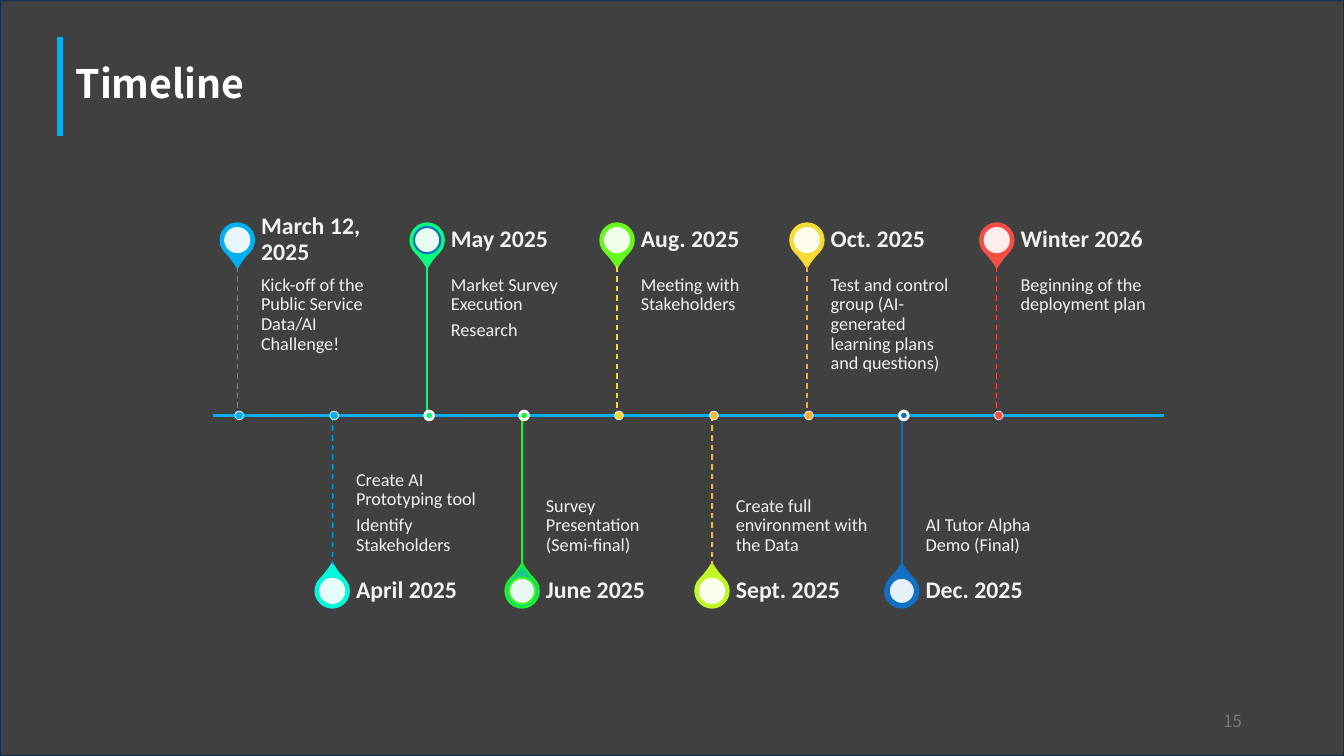
from dataclasses import dataclass
from typing import Optional

from lxml.etree import SubElement
from pptx import Presentation
from pptx.dml.color import RGBColor
from pptx.enum.dml import MSO_LINE
from pptx.enum.shapes import MSO_CONNECTOR, MSO_SHAPE
from pptx.enum.text import MSO_ANCHOR, MSO_AUTO_SIZE, PP_ALIGN
from pptx.oxml.ns import qn
from pptx.util import Cm, Pt

WHITE = RGBColor(0xFF, 0xFF, 0xFF)
CHARCOAL = RGBColor(0x40, 0x40, 0x40)
NAVY = RGBColor(0x07, 0x31, 0x56)
PALE = RGBColor(0xF2, 0xF2, 0xF2)
GREY = RGBColor(0x79, 0x79, 0x79)
SKY = RGBColor(0x02, 0xB0, 0xF1)
AQUA = RGBColor(0x03, 0xF8, 0xD9)
MINT = RGBColor(0x0A, 0xFA, 0x7B)
TEAL = RGBColor(0x1D, 0xC6, 0x95)
GREEN = RGBColor(0x14, 0xF9, 0x24)
BRIGHT_GREEN = RGBColor(0x3D, 0xF9, 0x1A)
GRASS = RGBColor(0x67, 0xF8, 0x1E)
LIME = RGBColor(0xC1, 0xF7, 0x28)
YELLOW = RGBColor(0xF6, 0xDB, 0x32)
AMBER = RGBColor(0xF6, 0xBC, 0x36)
ORANGE = RGBColor(0xF6, 0xA9, 0x38)
BLUE = RGBColor(0x11, 0x70, 0xC4)
RED = RGBColor(0xF5, 0x4F, 0x45)

HEADING_FONT = "Noto Sans CJK SC"
BODY_FONT = "Calibri"

# All lengths below are centimetres.
SLIDE_WIDTH, SLIDE_HEIGHT = 33.87, 19.05
AXIS_Y, AXIS_LEFT, AXIS_RIGHT = 10.47, 5.36, 29.34
FIRST_STEM_X, LAST_STEM_X = 5.98, 25.12
STEM_LENGTH = 3.76
PIN_OFFSET = 0.66
PIN_SIZE, HOLE_SIZE, DOT_SIZE = 0.84, 0.66, 0.22
DOT_SHIFT = 0.05
TEXT_SHIFT, TEXT_WIDTH, DATE_HEIGHT = 0.6, 3.61, 1.32


@dataclass
class Milestone:
    """A dated stop; one with a ring gets a solid stem and a heavy dot."""
    date: str
    notes: list[str]
    pin: RGBColor
    stem: RGBColor
    pin_line: Optional[RGBColor] = None
    ring: Optional[RGBColor] = None


MILESTONES = [
    Milestone("March 12, 2025", ["Kick-off of the Public Service Data/AI Challenge!"], SKY, SKY),
    Milestone("April 2025", ["Create AI Prototyping tool", "Identify Stakeholders"], AQUA, SKY),
    Milestone("May 2025", ["Market Survey Execution", "Research"], MINT, MINT, ring=BLUE),
    Milestone("June 2025", ["Survey Presentation (Semi-final)"], TEAL, GREEN,
              pin_line=GREEN, ring=BRIGHT_GREEN),
    Milestone("Aug. 2025", ["Meeting with Stakeholders"], GRASS, YELLOW),
    Milestone("Sept. 2025", ["Create full environment with the Data"], LIME, AMBER),
    Milestone("Oct. 2025",
              ["Test and control group (AI-generated learning plans and questions)"],
              YELLOW, ORANGE),
    Milestone("Dec. 2025", ["AI Tutor Alpha Demo (Final)"], BLUE, BLUE, ring=BLUE),
    Milestone("Winter 2026", ["Beginning of the deployment plan"], RED, RED),
]


def add_line(slide, start: tuple, end: tuple, color: RGBColor, width: float,
             dashed: bool = False) -> None:
    line = slide.shapes.add_connector(
        MSO_CONNECTOR.STRAIGHT, *(Cm(value) for value in (*start, *end)))
    line.line.color.rgb = color
    line.line.width = Pt(width)
    if dashed:
        line.line.dash_style = MSO_LINE.DASH
    SubElement(line._element.spPr, qn("a:effectLst"))


def add_centred(slide, preset: MSO_SHAPE, x: float, y: float, size: float, fill: RGBColor,
                outline: Optional[RGBColor] = None, width: float = 1.5):
    """Add a square-framed shape around the point (x, y)."""
    shape = slide.shapes.add_shape(
        preset, Cm(x - size / 2), Cm(y - size / 2), Cm(size), Cm(size))
    shape.shadow.inherit = False
    shape.fill.solid()
    shape.fill.fore_color.rgb = fill
    if outline is None:
        shape.line.fill.background()
    else:
        shape.line.color.rgb = outline
        shape.line.width = Pt(width)
    return shape


def add_text(slide, frame: tuple, insets: tuple, lines: list[str], size: float,
             anchor: MSO_ANCHOR, bold: bool = False) -> None:
    box = slide.shapes.add_textbox(*(Cm(value) for value in frame))
    text = box.text_frame
    text.word_wrap = True
    text.vertical_anchor = anchor
    text.margin_left, text.margin_top, text.margin_right, text.margin_bottom = (
        Cm(value) for value in insets)
    text.text = "\n".join(lines)
    for para in text.paragraphs:
        para.line_spacing = 0.9
        para.space_after = Pt(0.35 * size)
        style_font(para, BODY_FONT, size, PALE, bold)


def style_font(para, name: str, size: float, color: RGBColor, bold: bool = False) -> None:
    para.font.name = name
    para.font.size = Pt(size)
    para.font.bold = bold
    para.font.color.rgb = color


def add_milestone(slide, milestone: Milestone, x: float, above: bool) -> None:
    direction = -1 if above else 1
    tip_y = AXIS_Y + direction * STEM_LENGTH
    pin_y = tip_y + direction * PIN_OFFSET

    pin = add_centred(slide, MSO_SHAPE.TEAR, x, pin_y, PIN_SIZE, milestone.pin,
                      milestone.pin_line or milestone.pin)
    pin.adjustments[0] = 1.15
    pin.rotation = 135 if above else 315
    hole = add_centred(slide, MSO_SHAPE.OVAL, x, pin_y, HOLE_SIZE, WHITE, milestone.ring)
    hole_color = hole._element.spPr.find(qn("a:solidFill"))[0]
    SubElement(hole_color, qn("a:alpha"), val="90000")

    left = x + TEXT_SHIFT
    notes_top, date_top = (tip_y, tip_y - DATE_HEIGHT) if above else (AXIS_Y, tip_y)
    add_text(slide, (left, notes_top, TEXT_WIDTH, STEM_LENGTH),
             (0, 0.23, 0.23, 0.36) if above else (0, 0.36, 0, 0.23),
             milestone.notes, 13, MSO_ANCHOR.TOP if above else MSO_ANCHOR.BOTTOM)
    add_text(slide, (left, date_top, TEXT_WIDTH, DATE_HEIGHT), (0, 0, 0.3, 0),
             [milestone.date], 17, MSO_ANCHOR.MIDDLE, bold=True)

    add_line(slide, (x, min(tip_y, AXIS_Y)), (x, max(tip_y, AXIS_Y)), milestone.stem, 1,
             dashed=milestone.ring is None)
    add_centred(slide, MSO_SHAPE.OVAL, x + DOT_SHIFT, AXIS_Y, DOT_SIZE, milestone.stem,
                WHITE, 2 if milestone.ring else 0.5)


def add_backdrop(slide) -> None:
    slide.background.fill.solid()
    slide.background.fill.fore_color.rgb = CHARCOAL
    border = slide.shapes.add_shape(
        MSO_SHAPE.RECTANGLE, 0, 0, Cm(SLIDE_WIDTH), Cm(SLIDE_HEIGHT))
    border.shadow.inherit = False
    border.fill.background()
    border.line.color.rgb = NAVY
    border.line.width = Pt(1.5)


def add_title(slide) -> None:
    title = slide.shapes.title
    title.left, title.top, title.width, title.height = Cm(1.65), Cm(1.37), Cm(13.39), Cm(1.45)
    text = title.text_frame
    text.text = "Timeline"
    text.auto_size = MSO_AUTO_SIZE.NONE
    text.vertical_anchor = MSO_ANCHOR.MIDDLE
    para = text.paragraphs[0]
    para.alignment = PP_ALIGN.LEFT
    style_font(para, HEADING_FONT, 28, WHITE, bold=True)
    add_line(slide, (1.52, 0.94), (1.52, 3.43), SKY, 4.5)


def add_page_number(slide) -> None:
    box = slide.shapes.add_textbox(Cm(23.93), Cm(17.65), Cm(7.62), Cm(1.02))
    box.text_frame.word_wrap = True
    box.text_frame.vertical_anchor = MSO_ANCHOR.MIDDLE
    para = box.text_frame.paragraphs[0]
    para.text = "15"
    para.alignment = PP_ALIGN.RIGHT
    style_font(para, HEADING_FONT, 12, GREY)


def main() -> None:
    deck = Presentation()
    deck.slide_width, deck.slide_height = Cm(SLIDE_WIDTH), Cm(SLIDE_HEIGHT)
    slide = deck.slides.add_slide(deck.slide_layouts.get_by_name("Title Only"))
    add_backdrop(slide)
    add_title(slide)
    add_line(slide, (AXIS_LEFT, AXIS_Y), (AXIS_RIGHT, AXIS_Y), SKY, 1.5)
    step = (LAST_STEM_X - FIRST_STEM_X) / (len(MILESTONES) - 1)
    for index, milestone in enumerate(MILESTONES):
        add_milestone(slide, milestone, FIRST_STEM_X + index * step, above=index % 2 == 0)
    add_page_number(slide)
    deck.save("out.pptx")


if __name__ == "__main__":
    main()
